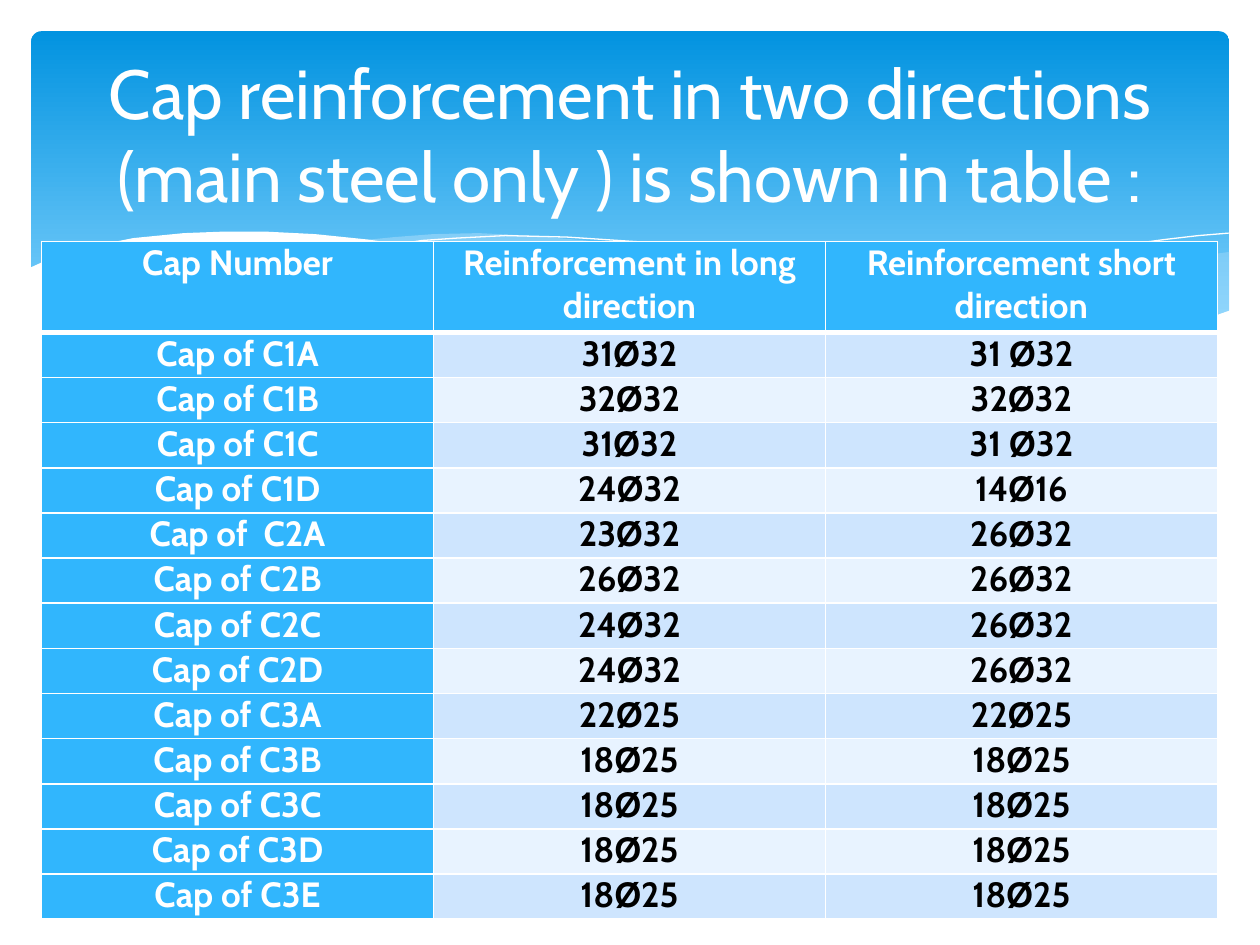
from dataclasses import dataclass
from typing import Optional

from lxml.etree import SubElement
from pptx import Presentation
from pptx.dml.color import RGBColor
from pptx.enum.shapes import MSO_SHAPE
from pptx.enum.text import MSO_ANCHOR, PP_ALIGN
from pptx.oxml import parse_xml
from pptx.oxml.ns import nsdecls, qn
from pptx.util import Cm, Pt

FONT = "Cabin"
WHITE, BLACK = "FFFFFF", "000000"
HEADER_BLUE = "31B6FD"
BAND_FILLS = ("CEE5FE", "E8F3FF")
TITLE = "Cap reinforcement in two directions (main steel only ) is shown in table :"
HEADINGS = ("Cap Number", "Reinforcement in long direction", "Reinforcement short direction")


@dataclass
class CapRow:
    name: str
    long_steel: str
    short_steel: str


@dataclass
class Wave:
    points: list[tuple[float, float]]
    fill: Optional[str] = None
    opacity: int = 100


CAPS = [
    CapRow("Cap of C1A", "31Ø32", "31 Ø32"),
    CapRow("Cap of C1B", "32Ø32", "32Ø32"),
    CapRow("Cap of C1C", "31Ø32", "31 Ø32"),
    CapRow("Cap of C1D", "24Ø32", "14Ø16"),
    CapRow("Cap of  C2A", "23Ø32", "26Ø32"),
    CapRow("Cap of C2B", "26Ø32", "26Ø32"),
    CapRow("Cap of C2C", "24Ø32", "26Ø32"),
    CapRow("Cap of C2D", "24Ø32", "26Ø32"),
    CapRow("Cap of C3A", "22Ø25", "22Ø25"),
    CapRow("Cap of C3B", "18Ø25", "18Ø25"),
    CapRow("Cap of C3C", "18Ø25", "18Ø25"),
    CapRow("Cap of C3D", "18Ø25", "18Ø25"),
    CapRow("Cap of C3E", "18Ø25", "18Ø25"),
]

WAVES = [
    Wave([(24.77, 5.08), (24.08, 5.18), (23.01, 5.41), (21.87, 5.66), (19.79, 6.15),
          (18.52, 6.43), (16.79, 6.73), (17.91, 6.88), (19.23, 7.01), (20.68, 7.06),
          (22.15, 6.96), (23.39, 6.73), (24.1, 6.53), (24.79, 6.27), (24.79, 5.08)],
         "C6E7FC", 29),
    Wave([(22.68, 6.93), (21.26, 6.73), (19.69, 6.45), (17.93, 6.1), (15.98, 5.64),
          (14.83, 5.36), (13.74, 5.16), (12.75, 4.98), (11.81, 4.85), (10.67, 4.75),
          (9.65, 4.7), (8.74, 4.72), (7.95, 4.78), (7.26, 4.85), (8.69, 5.05),
          (10.26, 5.36), (11.4, 5.64), (13.46, 6.1), (15.27, 6.48), (16.89, 6.76),
          (18.34, 6.96), (19.63, 7.04), (20.78, 7.06), (21.77, 7.04)],
         "C6E7FC", 40),
    Wave([(7.85, 4.95), (8.51, 4.85), (9.22, 4.8), (10.19, 4.75), (11.43, 4.78),
          (12.95, 4.88), (14.12, 5), (15.44, 5.18), (16.89, 5.41), (18.47, 5.74),
          (20.19, 6.12), (22.07, 6.63), (23.04, 6.91)]),
    Wave([(15.57, 6.53), (17.07, 6.12), (18.29, 5.82), (19.71, 5.49), (21.23, 5.18),
          (22.38, 4.98), (23.47, 4.83), (24.16, 4.75), (24.77, 4.7)]),
    Wave([(24.82, 6.25), (23.88, 6.58), (22.83, 6.83), (21.59, 6.99), (20.55, 7.04),
          (19.33, 6.99), (17.98, 6.86), (16.46, 6.65), (14.71, 6.35), (12.78, 5.92),
          (11.35, 5.59), (9.93, 5.26), (8.64, 5), (7.42, 4.83), (6.35, 4.72),
          (5.36, 4.67), (4.5, 4.67), (3.71, 4.7), (2.69, 4.8), (1.93, 4.95),
          (1.32, 5.11), (0.91, 5.26), (0.58, 5.41), (0.58, 8.36), (24.82, 8.36)],
         WHITE),
]


def set_color(target, color: str) -> None:
    target.rgb = RGBColor.from_string(color)


def set_fill(fill, color: str) -> None:
    fill.solid()
    set_color(fill.fore_color, color)


def format_paragraph(paragraph, size: float, color: str, bold: bool = False) -> None:
    paragraph.alignment = PP_ALIGN.CENTER
    for run in paragraph.runs:
        run.font.name = FONT
        run.font.size = Pt(size)
        run.font.bold = bold
        set_color(run.font.color, color)


def draw_banner(slide) -> None:
    shape = slide.shapes.add_shape(
        MSO_SHAPE.ROUNDED_RECTANGLE, Cm(0.63), Cm(0.63), Cm(24.15), Cm(6.86))
    shape.adjustments[0] = 0.03
    shape.shadow.inherit = False
    shape.line.fill.background()
    shape.fill.gradient()
    shape.fill.gradient_angle = 270
    for stop, position, color in zip(
            shape.fill.gradient_stops, (0, 0.9), ("0293E0", "83D3FE")):
        stop.position = position
        set_color(stop.color, color)


def draw_wave(slide, wave: Wave) -> None:
    points = [(Cm(x), Cm(y)) for x, y in wave.points]
    builder = slide.shapes.build_freeform(*points[0])
    builder.add_line_segments(points[1:], close=wave.fill is not None)
    shape = builder.convert_to_shape()
    shape.shadow.inherit = False
    if wave.fill is None:
        shape.fill.background()
        set_fill(shape.line.fill, WHITE)
        shape.line.width = Pt(0)
        return
    shape.line.fill.background()
    set_fill(shape.fill, wave.fill)
    if wave.opacity < 100:
        color = shape.element.spPr.find(qn("a:solidFill")).find(qn("a:srgbClr"))
        SubElement(color, qn("a:alpha"), val=str(wave.opacity * 1000))


def set_borders(cell, top: float, bottom: float) -> None:
    properties = cell._tc.get_or_add_tcPr()
    sides = {"lnL": 1, "lnR": 1, "lnT": top, "lnB": bottom}
    for index, (side, width) in enumerate(sides.items()):
        properties.insert(index, parse_xml(
            f'<a:{side} {nsdecls("a")} w="{Pt(width)}"><a:solidFill>'
            f'<a:srgbClr val="{WHITE}"/></a:solidFill></a:{side}>'))


def draw_cell(cell, text: str, row: int, column: int) -> None:
    is_heading = row == 0 or column == 0
    set_fill(cell.fill, HEADER_BLUE if is_heading else BAND_FILLS[(row - 1) % 2])
    set_borders(cell, top=3 if row == 1 else 1, bottom=3 if row == 0 else 1)
    cell.margin_left = cell.margin_right = Cm(0.18)
    cell.margin_top = cell.margin_bottom = 0
    cell.text_frame.text = text
    paragraph = cell.text_frame.paragraphs[0]
    paragraph.space_after = Pt(12)
    format_paragraph(paragraph, 20, WHITE if is_heading else BLACK, bold=True)


def draw_table(slide) -> None:
    contents = [HEADINGS] + [(cap.name, cap.long_steel, cap.short_steel) for cap in CAPS]
    table = slide.shapes.add_table(
        len(contents), len(HEADINGS), Cm(0.84), Cm(4.87), Cm(23.7), Cm(13.72)).table
    table.horz_banding = False
    for column in table.columns:
        column.width = Cm(7.9)
    for row, texts in enumerate(contents):
        table.rows[row].height = Cm(1.83 if row == 0 else 0.91)
        for column, text in enumerate(texts):
            draw_cell(table.cell(row, column), text, row, column)


def draw_title(slide) -> None:
    shape = slide.shapes.add_textbox(Cm(1.27), Cm(0.94), Cm(22.86), Cm(3.48))
    text_frame = shape.text_frame
    text_frame.word_wrap = True
    text_frame.vertical_anchor = MSO_ANCHOR.MIDDLE
    text_frame.text = TITLE
    format_paragraph(text_frame.paragraphs[0], 39.6, WHITE)


def main() -> None:
    presentation = Presentation()
    presentation.slide_width = Cm(25.4)
    presentation.slide_height = Cm(19.05)
    slide = presentation.slides.add_slide(presentation.slide_layouts[6])
    draw_banner(slide)
    for wave in WAVES:
        draw_wave(slide, wave)
    draw_table(slide)
    draw_title(slide)
    presentation.save("out.pptx")


if __name__ == "__main__":
    main()
